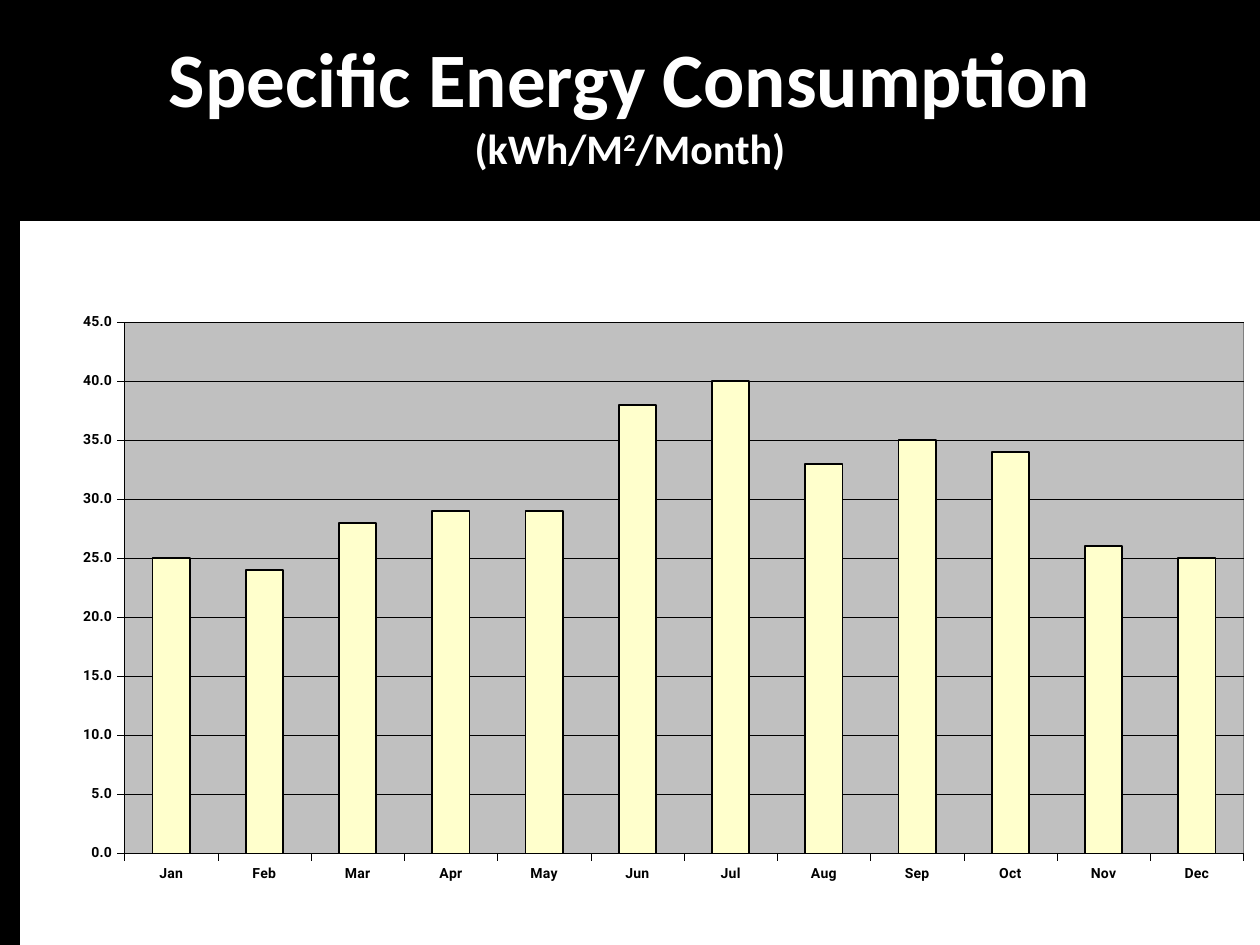
from dataclasses import dataclass

from pptx import Presentation
from pptx.chart.data import CategoryChartData
from pptx.dml.color import RGBColor
from pptx.enum.chart import XL_CHART_TYPE, XL_TICK_MARK
from pptx.enum.text import MSO_ANCHOR, PP_ALIGN
from pptx.oxml import parse_xml
from pptx.util import Pt


@dataclass(frozen=True)
class Theme:
    black: RGBColor = RGBColor(0x00, 0x00, 0x00)
    white: RGBColor = RGBColor(0xFF, 0xFF, 0xFF)
    bar: RGBColor = RGBColor(0xFF, 0xFF, 0xCC)
    plot: RGBColor = RGBColor(0xC0, 0xC0, 0xC0)
    plot_border: RGBColor = RGBColor(0x80, 0x80, 0x80)
    title_size: Pt = Pt(44)
    unit_size: Pt = Pt(24)
    chart_size: Pt = Pt(18.8)
    axis_size: Pt = Pt(8)
    hairline: Pt = Pt(0.25)
    bar_line: Pt = Pt(1)


theme = Theme()
NAMESPACES = (
    'xmlns:c="http://schemas.openxmlformats.org/drawingml/2006/chart" '
    'xmlns:a="http://schemas.openxmlformats.org/drawingml/2006/main"'
)


def area_format(fill, border):
    """Return chart-area properties with a solid fill and a hairline border."""
    return parse_xml(
        f'<c:spPr {NAMESPACES}><a:solidFill><a:srgbClr val="{fill}"/></a:solidFill>'
        f'<a:ln w="{theme.hairline}"><a:solidFill><a:srgbClr val="{border}"/>'
        '</a:solidFill></a:ln></c:spPr>'
    )


def set_line(line, width):
    line.color.rgb = theme.black
    line.width = width


deck = Presentation()
deck.slide_width, deck.slide_height = Pt(720), Pt(540)
page = deck.slides.add_slide(deck.slide_layouts[6])
page.background.fill.solid()
page.background.fill.fore_color.rgb = theme.black

# Title with its unit on the second line
title = page.shapes.add_textbox(Pt(0), Pt(6), Pt(720), Pt(104)).text_frame
title.word_wrap = True
title.vertical_anchor = MSO_ANCHOR.MIDDLE
para = title.paragraphs[0]
para.alignment = PP_ALIGN.CENTER
title_parts = [
    ("Specific Energy Consumption", theme.title_size, 0),
    ("(kWh/M", theme.unit_size, 0),
    ("2", theme.unit_size, 30000),
    ("/Month)", theme.unit_size, 0),
]
for position, (text, size, baseline) in enumerate(title_parts):
    if position == 1:
        para.add_line_break()
    span = para.add_run()
    span.text = text
    for name, value in {"name": "Calibri", "size": size, "bold": True}.items():
        setattr(span.font, name, value)
    span.font.color.rgb = theme.white
    if baseline:
        span._r.get_or_add_rPr().set("baseline", str(baseline))

# Monthly consumption chart
consumption = {
    "Jan": 25, "Feb": 24, "Mar": 28, "Apr": 29, "May": 29, "Jun": 38,
    "Jul": 40, "Aug": 33, "Sep": 35, "Oct": 34, "Nov": 26, "Dec": 25,
}
chart_data = CategoryChartData(number_format="0.0")
chart_data.categories = list(consumption)
chart_data.add_series("Series 1", list(consumption.values()))
chart = page.shapes.add_chart(
    XL_CHART_TYPE.COLUMN_CLUSTERED, Pt(10.8), Pt(126), Pt(709.2), Pt(414), chart_data
).chart
chart.has_title = False
chart.has_legend = False
chart.font.name = "Arial"
chart.font.size = theme.chart_size
chart.font.color.rgb = theme.black

plot = chart.plots[0]
plot.gap_width = 150
plot.vary_by_categories = False
bars = plot.series[0].format
bars.fill.solid()
bars.fill.fore_color.rgb = theme.bar
set_line(bars.line, theme.bar_line)

axis_font = {"name": "Roboto", "size": theme.axis_size, "bold": True}
for axis in (chart.category_axis, chart.value_axis):
    axis.major_tick_mark = XL_TICK_MARK.OUTSIDE
    axis.minor_tick_mark = XL_TICK_MARK.NONE
    set_line(axis.format.line, theme.hairline)
    font = axis.tick_labels.font
    for name, value in axis_font.items():
        setattr(font, name, value)
    font.color.rgb = theme.black

value_axis = chart.value_axis
for name, value in {"minimum_scale": 0, "maximum_scale": 45, "major_unit": 5}.items():
    setattr(value_axis, name, value)
value_axis.has_major_gridlines = True
set_line(value_axis.major_gridlines.format.line, theme.hairline)
value_axis.tick_labels.number_format = "0.0"
value_axis.tick_labels.number_format_is_linked = False

# Fixed inner plot area, with fills behind the plot and the whole chart
chart_element = chart._chartSpace.chart
plot_area = chart_element.plotArea
for layout in plot_area.findall("{*}layout"):
    plot_area.remove(layout)
bounds = {"x": 0.085, "y": 0.14, "w": 0.902, "h": 0.734}
bounds_xml = "".join(f'<c:{key} val="{value}"/>' for key, value in bounds.items())
plot_area.insert(0, parse_xml(
    f'<c:layout {NAMESPACES}><c:manualLayout><c:layoutTarget val="inner"/>'
    f'<c:xMode val="edge"/><c:yMode val="edge"/>{bounds_xml}</c:manualLayout></c:layout>'
))
plot_area.append(area_format(theme.plot, theme.plot_border))
chart_element.addnext(area_format(theme.white, theme.black))

deck.save("out.pptx")
